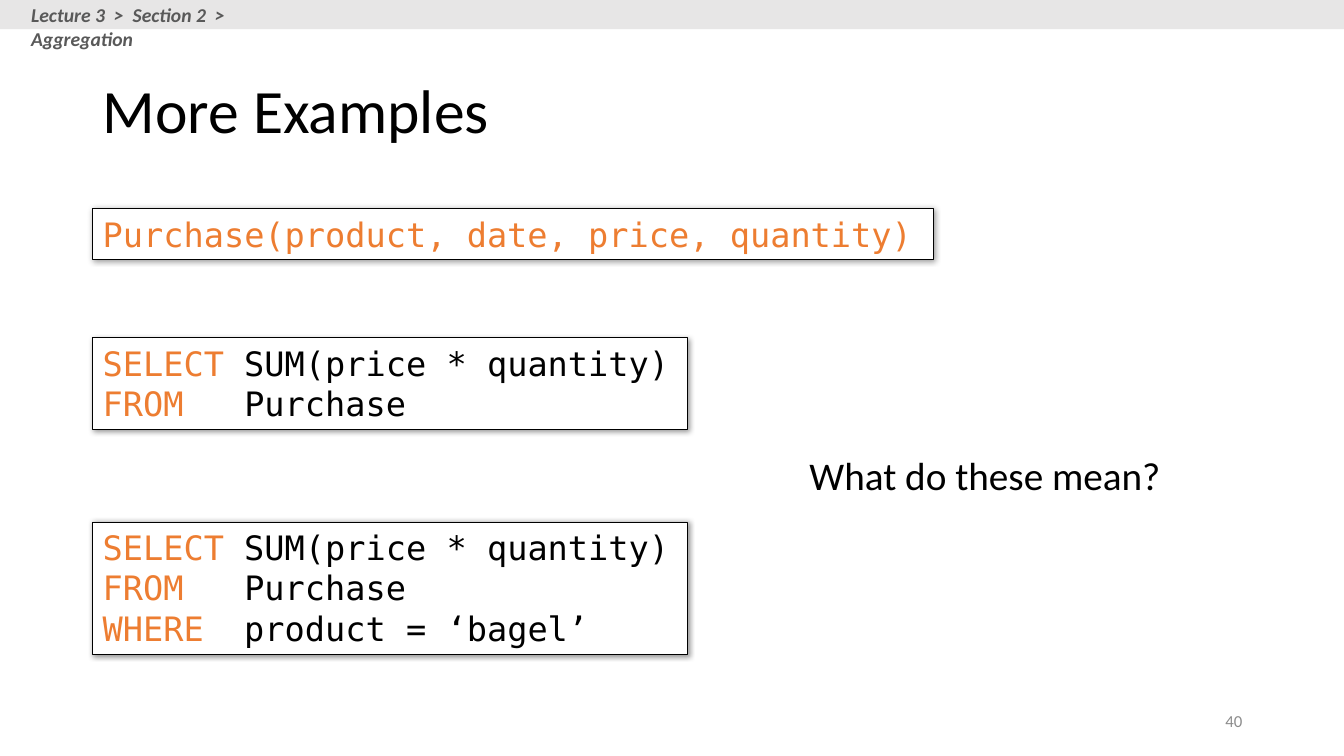
from lxml import etree
from pptx import Presentation
from pptx.dml.color import RGBColor
from pptx.enum.shapes import MSO_SHAPE as Shape
from pptx.enum.text import MSO_ANCHOR as Anchor, PP_ALIGN as Align
from pptx.oxml.ns import qn
from pptx.util import Inches, Pt

BLACK = RGBColor(0x00, 0x00, 0x00)
WHITE = RGBColor(0xFF, 0xFF, 0xFF)
ORANGE = RGBColor(0xED, 0x7D, 0x31)
BAR_GRAY = RGBColor(0xE7, 0xE6, 0xE6)
CRUMB_GRAY = RGBColor(0x59, 0x59, 0x59)
NUMBER_GRAY = RGBColor(0x8C, 0x8C, 0x8C)
BODY_FONT = "Calibri"
CODE_FONT = "DejaVu Sans Mono"

TITLE = "More Examples"
BREADCRUMB = "Lecture 3  >  Section 2  >  Aggregation"
QUESTION = "What do these mean?"
SLIDE_NUMBER = "40"

SUM_QUERY = [("SELECT", " SUM(price * quantity)"), ("FROM", "   Purchase")]
FILTERED_QUERY = SUM_QUERY + [("WHERE ", " product = ‘bagel’")]
CODE_BOXES = [
    (2.07, 8.34, [("Purchase(product, date, price, quantity)", "")]),
    (3.35, 5.9, SUM_QUERY),
    (5.18, 5.9, FILTERED_QUERY),
]
LEFT = 0.92
LINE_HEIGHT = 0.405
BOX_PADDING = 0.1


def style(span, size, color, font=BODY_FONT):
    span.font.name = font
    span.font.size = Pt(size)
    span.font.color.rgb = color


def add_label(page, place, text, size, color):
    box = page.shapes.add_textbox(*map(Inches, place))
    box.text_frame.word_wrap = True
    para = box.text_frame.paragraphs[0]
    para.text = text
    style(para.runs[0], size, color)
    return box


def add_box(page, place, fill):
    box = page.shapes.add_shape(Shape.RECTANGLE, *map(Inches, place))
    box.shadow.inherit = False
    box.fill.solid()
    box.fill.fore_color.rgb = fill
    box.line.fill.background()
    return box


def add_shadow(box):
    effects = box._element.spPr.find(qn("a:effectLst"))
    shadow = etree.SubElement(
        effects, qn("a:outerShdw"), blurRad=str(Pt(4)), dist=str(Pt(1)),
        dir=str(45 * 60000), algn="tl", rotWithShape="0")
    color = etree.SubElement(shadow, qn("a:srgbClr"), val=str(BLACK))
    etree.SubElement(color, qn("a:alpha"), val="40000")


def add_code(page, top, width, lines):
    height = len(lines) * LINE_HEIGHT + BOX_PADDING
    box = add_box(page, (LEFT, top, width, height), WHITE)
    box.line.color.rgb = BLACK
    box.line.width = Pt(0.75)
    add_shadow(box)
    frame = box.text_frame
    frame.word_wrap = True
    frame.vertical_anchor = Anchor.TOP
    for index, line in enumerate(lines):
        para = frame.add_paragraph() if index else frame.paragraphs[0]
        para.alignment = Align.LEFT
        for text, color in zip(line, (ORANGE, BLACK)):
            if text:
                span = para.add_run()
                span.text = text
                style(span, 24, color, CODE_FONT)


def add_title(page):
    title = page.shapes.title
    title.left, title.top, title.width, title.height = map(
        Inches, (LEFT, 0.4, 11.5, 1.45))
    title.text_frame.text = TITLE
    title.text_frame.vertical_anchor = Anchor.MIDDLE
    para = title.text_frame.paragraphs[0]
    para.alignment = Align.LEFT
    para.line_spacing = 0.9
    style(para.runs[0], 44, BLACK)


def main():
    deck = Presentation()
    deck.slide_width, deck.slide_height = Inches(13.33), Inches(7.5)
    page = deck.slides.add_slide(deck.slide_layouts[5])
    add_title(page)

    number = add_label(page, (9.42, 6.95, 3, 0.4), SLIDE_NUMBER, 12, NUMBER_GRAY)
    number.text_frame.vertical_anchor = Anchor.MIDDLE
    number.text_frame.paragraphs[0].alignment = Align.RIGHT

    for top, width, lines in CODE_BOXES:
        add_code(page, top, width, lines)

    add_box(page, (0, 0, 13.33, 0.29), BAR_GRAY)
    crumb = add_label(page, (0.21, -0.02, 3.17, 0.34), BREADCRUMB, 14, CRUMB_GRAY)
    crumb_font = crumb.text_frame.paragraphs[0].runs[0].font
    crumb_font.bold = crumb_font.italic = True

    add_label(page, (7.93, 4.43, 3.69, 0.57), QUESTION, 28, BLACK)
    deck.save("out.pptx")


if __name__ == "__main__":
    main()
